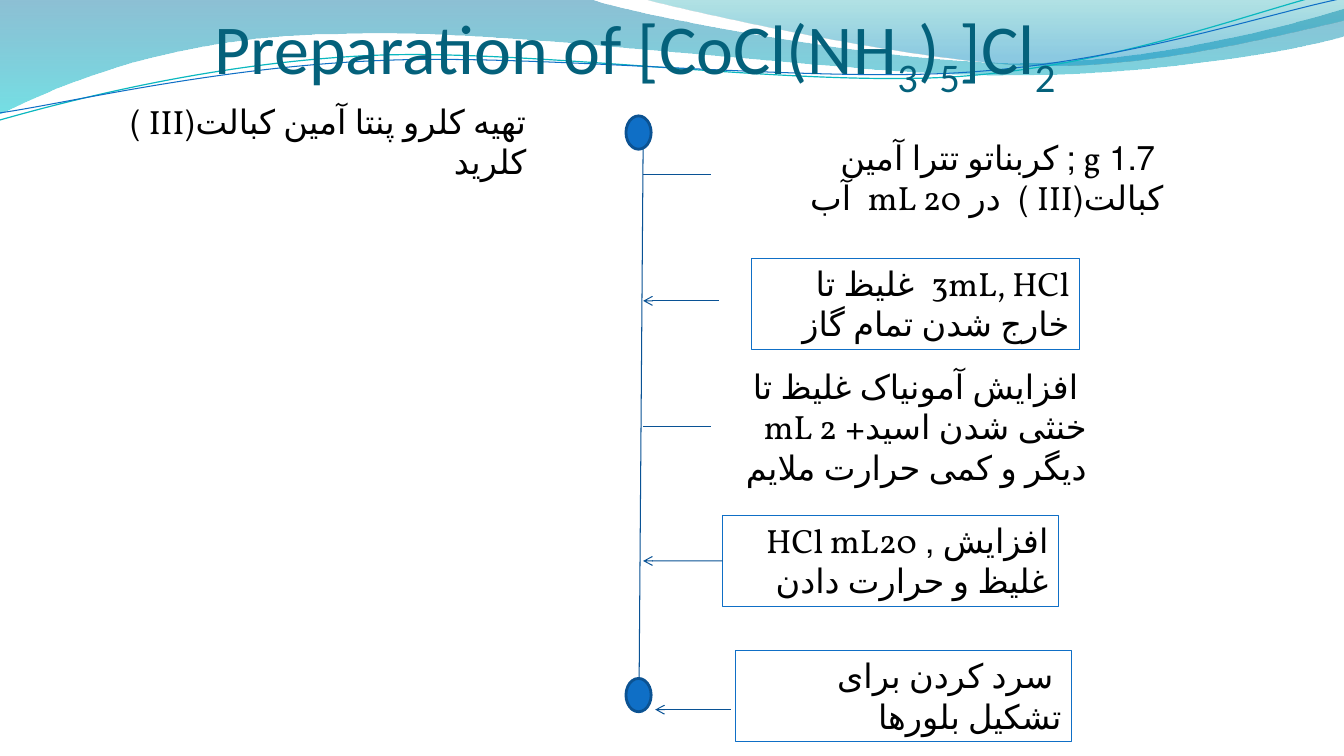
from dataclasses import dataclass

import pptx
import pptx.dml.color
import pptx.enum.dml
import pptx.enum.shapes
import pptx.enum.text
import pptx.oxml.ns
import pptx.util
from lxml import etree

Pt = pptx.util.Pt
RGB = pptx.dml.color.RGBColor.from_string
SHAPE = pptx.enum.shapes.MSO_SHAPE
qn = pptx.oxml.ns.qn


@dataclass
class Theme:
    title: str = "04617B"
    body: str = "000000"
    accent: str = "0F6FC6"
    dot_line: str = "0B5292"
    flow: str = "095295"
    teal: str = "0AB8BF"
    title_font: str = "Calibri"
    body_font: str = "Vollkorn"
    title_size: float = 50
    body_size: float = 24
    thin: float = 0.75


theme = Theme()
prs = pptx.Presentation()
prs.slide_width, prs.slide_height = Pt(960), Pt(540)
s = prs.slides.add_slide(prs.slide_layouts[6])


def add_text(parts, x, y, w, h, font=theme.body_font, size=theme.body_size,
             color=theme.body, rtl=True, boxed=False):
    """Place one paragraph; every second part is a subscript."""
    if boxed:
        sp = s.shapes.add_shape(SHAPE.RECTANGLE, Pt(x), Pt(y), Pt(w), Pt(h))
        sp.shadow.inherit = False
        sp.fill.background()
        sp.line.color.rgb = RGB(theme.accent)
        sp.line.width = Pt(theme.thin)
    else:
        sp = s.shapes.add_textbox(Pt(x), Pt(y), Pt(w), Pt(h))
    tf = sp.text_frame
    tf.word_wrap = True
    tf.auto_size = pptx.enum.text.MSO_AUTO_SIZE.SHAPE_TO_FIT_TEXT
    tf.vertical_anchor = pptx.enum.text.MSO_ANCHOR.TOP
    p = tf.paragraphs[0]
    p.alignment = pptx.enum.text.PP_ALIGN.RIGHT if rtl else pptx.enum.text.PP_ALIGN.LEFT
    if rtl:
        p._p.get_or_add_pPr().set("rtl", "1")
    for i, part in enumerate(parts):
        r = p.add_run()
        r.text = part
        r.font.name, r.font.size = font, Pt(size)
        r.font.color.rgb = RGB(color)
        r.font._element.set("lang", "fa-IR" if rtl else "en-US")
        if i % 2:
            r.font._element.set("baseline", "-25000")
    return sp


def add_wave(start, segments, closed):
    """Trace straight (2 numbers) and cubic Bezier (6 numbers) segments."""
    fb = s.shapes.build_freeform(Pt(start[0]), Pt(start[1]))
    fb.add_line_segments([(Pt(seg[i]), Pt(seg[i + 1]))
                          for seg in segments for i in range(0, len(seg), 2)], close=closed)
    sp = fb.convert_to_shape()
    sp.shadow.inherit = False
    steps = iter(list(sp._element.iter(qn("a:lnTo"))))
    for seg in segments:
        first = next(steps)
        if len(seg) == 6:
            curve = etree.Element(qn("a:cubicBezTo"))
            first.addprevious(curve)
            for step in (first, next(steps), next(steps)):
                curve.append(step[0])
                step.getparent().remove(step)
    return sp


# Header waves: start, segments, gradient stops (position, colour, alpha %)
bands = [
    ((0, 0),
     [(422.6, 0), (456.5, 12.2, 637.2, 45.4, 727.9, 45.4),
      (819.4, 45.4, 920.2, 18.7, 960, 6.5), (960, 26),
      (943.9, 31.7, 835.2, 54.7, 715.7, 54), (596.9, 54, 366.5, 20.2, 247, 24.5),
      (123.8, 25.2, 43.9, 59.8, 0, 81.4)],
     [(0, "0074A1", 45), (1, "00C6CF", 55)]),
    ((460, 0),
     [(488.9, 7.9, 654.5, 44.6, 738, 46.8), (821.5, 49.7, 923, 23, 960, 15), (960, 0)],
     [(0, "00A1A9", 30), (0.8, "008BBF", 45)]),
]
for start, segments, stops in bands:
    sp = add_wave(start, segments, True)
    sp.line.fill.background()
    sp.fill.gradient()
    sp.fill.gradient_angle = 270
    for stop, (position, color, _) in zip(sp.fill.gradient_stops, stops):
        stop.position = position
        stop.color.rgb = RGB(color)
    for clr, (_, _, alpha) in zip(sp._element.spPr.iter(qn("a:srgbClr")), stops):
        etree.SubElement(clr, qn("a:alpha")).set("val", str(alpha * 1000))

# Header curves
curves = [
    ((0, 85.7),
     [(46, 72.7, 152, 44.6, 265.7, 39.6), (379.4, 34.6, 568.8, 62.6, 684, 54.7),
      (799.2, 46.8, 901.4, 5.8, 958.3, -7.2)], theme.teal, 0.85),
    ((0, 80.6),
     [(45.4, 74.2, 157, 47.5, 272.2, 43.2), (385.9, 38.2, 573.1, 59, 687.6, 51.8),
      (802.8, 44.6, 903.6, 10, 960, -1.4)], theme.accent, theme.thin),
]
for start, segments, color, width in curves:
    sp = add_wave(start, segments, False)
    sp.fill.background()
    sp.line.color.rgb = RGB(color)
    sp.line.width = Pt(width)

# Preparation steps
add_text([" 1.7 g ; کربناتو تترا آمین کبالت(III )  در mL 20  آب"], 513.4, 94.3, 324.7, 65.5)
add_text(["3mL, HCl  غلیظ تا خارج شدن تمام گاز"], 537.1, 184.3, 234, 65.5, boxed=True)
add_text([" افزایش آمونیاک غلیظ تا خنثی شدن اسید+ mL 2 دیگر و کمی حرارت ملایم"],
         525.6, 257.8, 257.8, 94.3)
heating = add_text(["افزایش , HCl mL20 غلیظ و حرارت دادن "], 516.2, 367.9, 239.8, 65.5, boxed=True)
add_text([" سرد کردن برای تشکیل بلورها"], 525.6, 464.4, 239.8, 65.5, boxed=True)

# Flow line and its branches: from, to, arrowhead, joined box
links = [
    ((459.4, 103), (456.5, 491), False, None),
    ((507.6, 124.6), (459.4, 124.6), False, None),
    ((507.6, 304.6), (459.4, 304.6), False, None),
    ((513.4, 214.9), (459.4, 214.9), True, None),
    ((516.2, 400.7), (459.4, 400.7), True, heating),
    ((522, 506.9), (468, 506.9), True, None),
]
for (x1, y1), (x2, y2), arrow, box in links:
    c = s.shapes.add_connector(pptx.enum.shapes.MSO_CONNECTOR.STRAIGHT,
                               Pt(x1), Pt(y1), Pt(x2), Pt(y2))
    if box is not None:
        c.begin_connect(box, 1)
    c.line.color.rgb = RGB(theme.flow)
    c.line.width = Pt(theme.thin)
    spPr = c._element.spPr
    if arrow:
        etree.SubElement(spPr.find(qn("a:ln")), qn("a:tailEnd")).set("type", "arrow")
    etree.SubElement(spPr, qn("a:effectLst"))

# End dots of the flow line
for y in (82.8, 484.6):
    sp = s.shapes.add_shape(SHAPE.OVAL, Pt(447.1), Pt(y), Pt(18), Pt(23.8))
    sp.shadow.inherit = False
    sp.fill.solid()
    sp.fill.fore_color.rgb = RGB(theme.accent)
    sp.line.color.rgb = RGB(theme.dot_line)
    sp.line.width = Pt(2)

# Titles
add_text(["تهیه کلرو پنتا آمین کبالت(III ) کلرید"], 58.3, 68.4, 324.7, 36)
add_text(["Preparation of [CoCl(NH", "3", ")", "5", "]Cl", "2"], 146.2, 0, 758.9, 67.7,
         font=theme.title_font, size=theme.title_size, color=theme.title, rtl=False)

prs.save("out.pptx")
